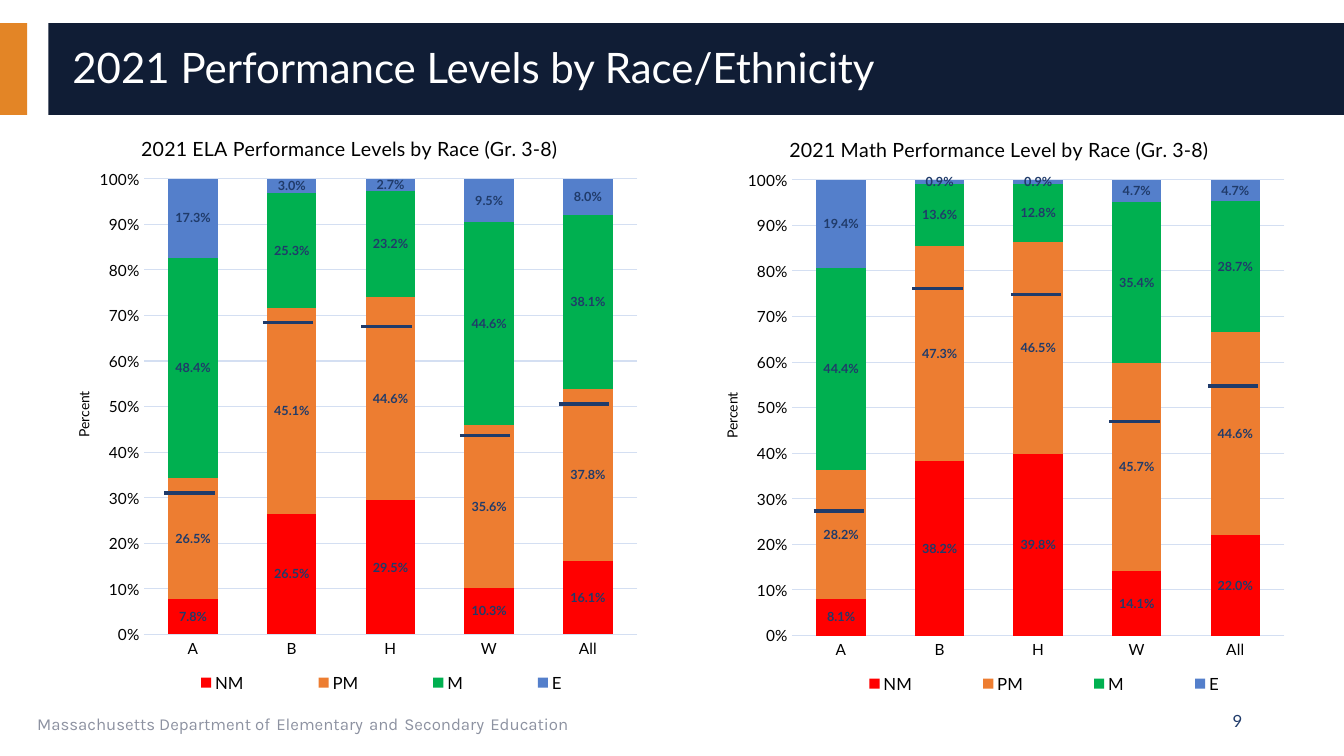
from dataclasses import dataclass

from lxml.etree import SubElement
from pptx import Presentation
from pptx.chart.data import CategoryChartData
from pptx.dml.color import RGBColor
from pptx.enum.chart import XL_CHART_TYPE as ChartType
from pptx.enum.chart import XL_LEGEND_POSITION as LegendPosition
from pptx.enum.chart import XL_TICK_MARK as TickMark
from pptx.enum.shapes import MSO_CONNECTOR as Connector
from pptx.enum.shapes import MSO_SHAPE as Shape
from pptx.enum.text import MSO_ANCHOR as Anchor
from pptx.enum.text import PP_ALIGN as Align
from pptx.oxml import parse_xml
from pptx.oxml.ns import nsdecls, qn
from pptx.util import Inches, Pt


@dataclass(frozen=True)
class Theme:
    orange: str = "E38526"
    banner: str = "101D35"
    navy: str = "203B6A"
    gray: str = "8D92A1"
    grid: str = "D4DFF2"
    black: str = "000000"
    white: str = "FFFFFF"
    levels: tuple = ("FF0000", "ED7D31", "00B050", "547FCB")
    font: str = "Lato"
    footer_font: str = "Karla"
    heading: float = 30
    footer_gap: float = 18
    chart_title: float = 14
    small: float = 12
    axis: float = 11
    axis_title: float = 10
    label: float = 9


@dataclass(frozen=True)
class Panel:
    title: str
    frame: tuple
    legend: tuple
    values: tuple
    first_mark: float
    mark_heights: tuple


THEME = Theme()
GROUPS = ("A", "B", "H", "W", "All")
LEVELS = ("NM", "PM", "M", "E")
MARK_LENGTH = 0.5
MARK_PITCH = 3.91 / 4
PLOT = (0.16, 0.12, 0.82, 0.76)

PANELS = (
    Panel(
        "2021 ELA Performance Levels by Race (Gr. 3-8)",
        (0.47, 1.06, 5.97, 5.95), (0.14, 0.93, 0.83, 0.06),
        ((0.078, 0.265, 0.295, 0.103, 0.161),
         (0.265, 0.451, 0.446, 0.356, 0.378),
         (0.484, 0.253, 0.232, 0.446, 0.381),
         (0.173, 0.03, 0.027, 0.095, 0.08)),
        1.63, (4.89, 3.2, 3.24, 4.32, 4.01)),
    Panel(
        "2021 Math Performance Level by Race (Gr. 3-8)",
        (6.9, 1.07, 5.96, 5.95), (0.18, 0.93, 0.8, 0.06),
        ((0.081, 0.382, 0.398, 0.141, 0.22),
         (0.282, 0.473, 0.465, 0.457, 0.446),
         (0.444, 0.136, 0.128, 0.354, 0.287),
         (0.194, 0.009, 0.009, 0.047, 0.047)),
        8.07, (5.07, 2.86, 2.92, 4.18, 3.83)),
)


def rgb(color: str) -> RGBColor:
    return RGBColor.from_string(color)


def style(font, size: float, color: str, name: str = THEME.font, bold: bool = False) -> None:
    font.size, font.name, font.bold = Pt(size), name, bold
    font.color.rgb = rgb(color)


def add_block(page, frame: tuple, color: str) -> None:
    block = page.shapes.add_shape(Shape.RECTANGLE, *map(Inches, frame))
    block.shadow.inherit = False
    block.fill.solid()
    block.fill.fore_color.rgb = rgb(color)
    block.line.fill.background()


def add_text(page, frame: tuple, text: str, size: float, color: str, align=Align.LEFT):
    box = page.shapes.add_textbox(*map(Inches, frame))
    box.text_frame.word_wrap = True
    box.text_frame.vertical_anchor = Anchor.MIDDLE
    para = box.text_frame.paragraphs[0]
    para.text = text
    para.alignment = align
    for span in para.runs:
        style(span.font, size, color)
    return para


def add_footer(page) -> None:
    para = add_text(page, (0.27, 6.95, 8.44, 0.4), "", THEME.small, THEME.gray)
    words = ("Massachusetts Department of", "Elementary", "and", "Secondary", "Education")
    for index, word in enumerate(words):
        if index:
            gap = para.add_run()
            gap.text = " "
            style(gap.font, THEME.footer_gap, THEME.navy, THEME.footer_font)
        span = para.add_run()
        span.text = word
        style(span.font, THEME.small, THEME.gray, THEME.footer_font)


def place(element, index: int, position: tuple, inner: bool = False) -> None:
    """Give a chart part a manual layout as fractions of the chart."""
    for old in element.findall(qn("c:layout")):
        element.remove(old)
    layout = parse_xml(f"<c:layout {nsdecls('c')}><c:manualLayout/></c:layout>")
    manual = layout[0]
    settings = [("layoutTarget", "inner")] if inner else []
    settings += [("xMode", "edge"), ("yMode", "edge")]
    settings += list(zip("xywh", position))
    for tag, value in settings:
        SubElement(manual, qn(f"c:{tag}")).set("val", str(value))
    element.insert(index, layout)


def set_title(title, text: str, size: float, position: tuple) -> None:
    title.text_frame.text = text
    style(title.text_frame.paragraphs[0].runs[0].font, size, THEME.black)
    place(title._element, 1, position)


def style_axes(chart) -> None:
    for axis in (chart.category_axis, chart.value_axis):
        axis.major_tick_mark = axis.minor_tick_mark = TickMark.NONE
        style(axis.tick_labels.font, THEME.axis, THEME.black)
    category_line = chart.category_axis.format.line
    grid_line = chart.value_axis.major_gridlines.format.line
    for line in (category_line, grid_line):
        line.color.rgb, line.width = rgb(THEME.grid), Pt(0.75)
    percent = chart.value_axis
    percent.minimum_scale, percent.maximum_scale, percent.major_unit = 0, 1, 0.1
    percent.tick_labels.number_format = "0%"
    percent.tick_labels.number_format_is_linked = False
    percent.format.line.fill.background()
    set_title(percent.axis_title, "Percent", THEME.axis_title, (0.04, 0.47))
    percent.axis_title._element.find(".//" + qn("a:bodyPr")).set("rot", "-5400000")


def add_panel(page, panel: Panel) -> None:
    data = CategoryChartData(number_format="0.0%")
    data.categories = GROUPS
    for level, values in zip(LEVELS, panel.values):
        data.add_series(level, values)
    chart = page.shapes.add_chart(
        ChartType.COLUMN_STACKED, *map(Inches, panel.frame), data).chart
    style(chart.font, THEME.axis_title, THEME.navy)
    chart.has_title = True
    set_title(chart.chart_title, panel.title, THEME.chart_title, (0.15, 0.04))
    style_axes(chart)

    # Stacked columns with value labels
    plot = chart.plots[0]
    plot.gap_width, plot.overlap, plot.vary_by_categories = 100, 100, False
    for series, color in zip(plot.series, THEME.levels):
        series.format.fill.solid()
        series.format.fill.fore_color.rgb = rgb(color)
        labels = series.data_labels
        labels.show_value = True
        labels.number_format, labels.number_format_is_linked = "0.0%", False
        style(labels.font, THEME.label, THEME.navy, bold=True)
    place(chart._chartSpace.chart.plotArea, 0, PLOT, inner=True)

    # Legend
    chart.has_legend = True
    chart.legend.position = LegendPosition.BOTTOM
    chart.legend.include_in_layout = False
    style(chart.legend.font, THEME.small, THEME.black)
    place(chart.legend._element, 1, panel.legend)


def add_marks(page, panel: Panel) -> None:
    for index, height in enumerate(panel.mark_heights):
        left = panel.first_mark + index * MARK_PITCH
        mark = page.shapes.add_connector(
            Connector.STRAIGHT, *map(Inches, (left, height, left + MARK_LENGTH, height)))
        mark.line.color.rgb, mark.line.width = rgb(THEME.navy), Pt(2.5)
        SubElement(mark._element.spPr, qn("a:effectLst"))


def main() -> None:
    deck = Presentation()
    deck.slide_width, deck.slide_height = Inches(13.33), Inches(7.5)
    page = deck.slides.add_slide(deck.slide_layouts[6])

    # Banner, footer and page number
    add_block(page, (0, 0.23, 0.27, 0.91), THEME.orange)
    add_block(page, (0.48, 0.23, 12.85, 0.91), THEME.banner)
    add_footer(page)
    add_text(page, (9.42, 6.95, 3, 0.4), "9", THEME.small, THEME.navy, Align.RIGHT)
    heading = add_text(page, (0.62, 0.32, 12.5, 0.74),
                       "2021 Performance Levels by Race/Ethnicity", THEME.heading, THEME.white)
    heading.line_spacing = 0.9

    # Charts, then the marks over their columns
    for panel in PANELS:
        add_panel(page, panel)
    for panel in PANELS:
        add_marks(page, panel)
    deck.save("out.pptx")


if __name__ == "__main__":
    main()
